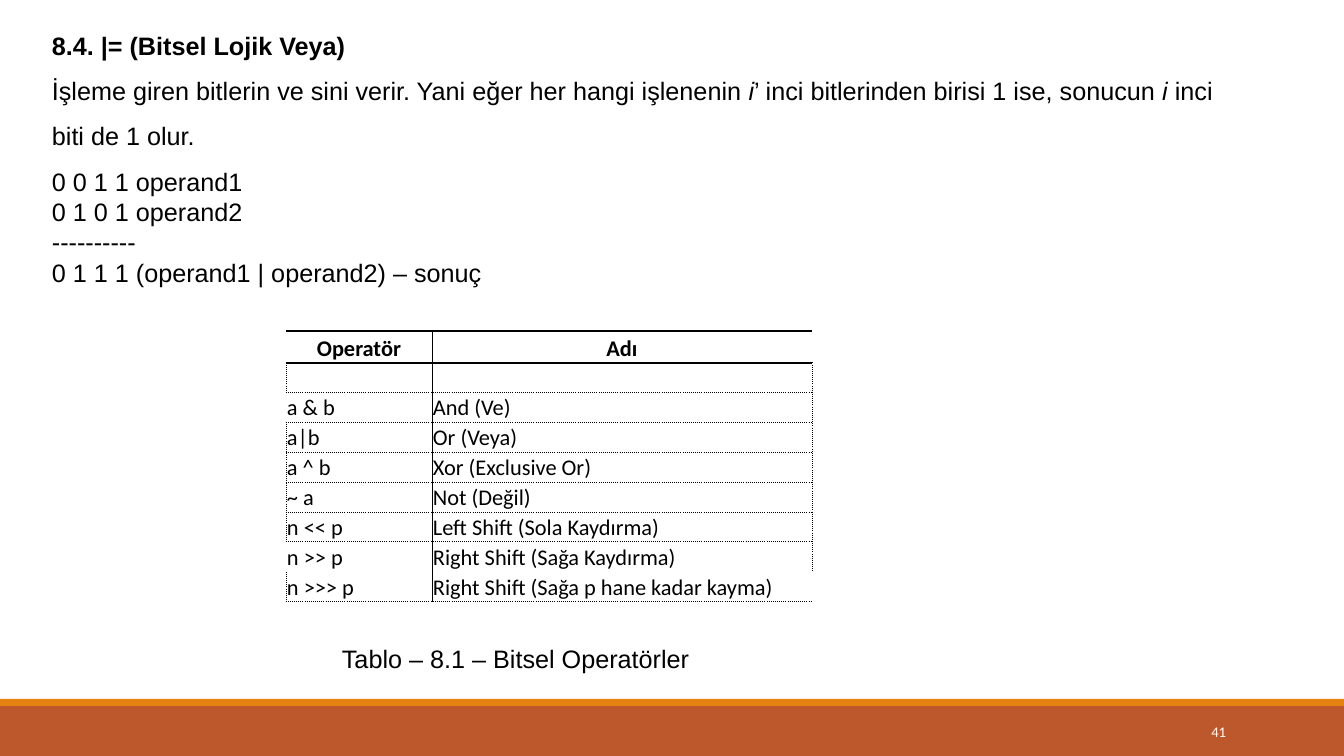
from lxml.etree import SubElement
from pptx import Presentation
from pptx.dml.color import RGBColor
from pptx.enum.shapes import MSO_SHAPE as SHAPE
from pptx.enum.text import MSO_ANCHOR as ANCHOR, MSO_AUTO_SIZE as AUTO, PP_ALIGN as ALIGN
from pptx.oxml.ns import qn
from pptx.util import Pt

PX = 12192000 / 1344
BLACK, WHITE = "000000", "FFFFFF"
BODY = dict(name="Arial", size=18)
CELL = dict(name="Calibri", size=16)
NUMBER = dict(name="Calibri", size=10.5, color=WHITE)
BOLD, ITALIC = dict(bold=True), dict(italic=True)

BANDS = [((0, 706, 1344, 50), "BD582C"), ((0, 699, 1344, 7), "E48312")]

# Each paragraph: line spacing, then runs of (text, extra format)
EXPLANATION = [
    (1.5, [("8.4. |= (Bitsel Lojik Veya)", BOLD)]),
    (1.5, [("İşleme giren bitlerin ve sini verir. Yani eğer her hangi işlenenin ", {}),
           ("i", ITALIC),
           ("’ inci bitlerinden birisi 1 ise, sonucun ", {}),
           ("i ", ITALIC),
           ("inci biti de 1 olur.", {})]),
    (1.5, [("0 0 1 1 operand1", {})]),
    (1.0, [("0 1 0 1 operand2", {})]),
    (1.0, [("----------", {})]),
    (1.0, [("0 1 1 1 (operand1 | operand2) – sonuç", {})]),
]
CAPTION = [(1.0, [("Tablo – 8.1 – Bitsel Operatörler", {})])]
SLIDE_NUMBER = [(1.0, [("41", {})])]

OPERATORS = [
    ("Operatör", "Adı"),
    ("", ""),
    ("a & b", "And (Ve)"),
    ("a|b", "Or (Veya)"),
    ("a ^ b", "Xor (Exclusive Or)"),
    ("~ a", "Not (Değil)"),
    ("n << p", "Left Shift (Sola Kaydırma)"),
    ("n >> p", "Right Shift (Sağa Kaydırma)"),
    ("n >>> p", "Right Shift (Sağa p hane kadar kayma)"),
]
TABLE_LEFT, TABLE_TOP = 286, 331
COLUMNS = [146, 380]
ROWS = [32, 29] + [30] * 7

# Borders are (points, dash); None leaves the edge open
RULE, INNER, DOT = (1, "solid"), (0.5, "solid"), (0.5, "sysDot")
ROW_LINES = [RULE, RULE] + [DOT] * 6 + [None, DOT]
LEFT_LINES = [None if i in (0, 2, 7) else DOT for i in range(len(ROWS))]
RIGHT_LINES = [None if i in (0, 8) else DOT for i in range(len(ROWS))]


def emu(*lengths):
    return [round(v * PX) for v in lengths]


def rgb(color):
    return RGBColor.from_string(color)


def add_run(p, text, color=BLACK, size=18, **values):
    r = p.add_run()
    r.text = text
    r.font.size = Pt(size)
    r.font.color.rgb = rgb(color)
    for name, value in values.items():
        setattr(r.font, name, value)


def add_text(slide, box, paragraphs, style, align=ALIGN.LEFT, **frame):
    tf = slide.shapes.add_textbox(*emu(*box)).text_frame
    for name, value in frame.items():
        setattr(tf, name, value)
    for i, (spacing, runs) in enumerate(paragraphs):
        p = tf.add_paragraph() if i else tf.paragraphs[0]
        p.alignment = align
        p.line_spacing = spacing
        for text, extra in runs:
            add_run(p, text, **style, **extra)


def add_band(slide, box, color):
    sp = slide.shapes.add_shape(SHAPE.RECTANGLE, *emu(*box))
    sp.shadow.inherit = False
    sp.fill.solid()
    sp.fill.fore_color.rgb = rgb(color)
    sp.line.fill.background()


def set_borders(cell, *lines):
    """Draw the left, right, top and bottom edges, in that order."""
    tcPr = cell._tc.get_or_add_tcPr()
    for side, line in zip("LRTB", lines):
        ln = SubElement(tcPr, qn("a:ln" + side))
        if line is None:
            SubElement(ln, qn("a:noFill"))
            continue
        points, dash = line
        ln.set("w", str(Pt(points)))
        SubElement(SubElement(ln, qn("a:solidFill")), qn("a:srgbClr"), val=BLACK)
        SubElement(ln, qn("a:prstDash"), val=dash)


def fill_cell(cell, text, header):
    margins = dict(zip(("margin_left", "margin_right", "margin_top", "margin_bottom"),
                       emu(1, 1, 1, 0)))
    for name, value in dict(margins, vertical_anchor=ANCHOR.BOTTOM).items():
        setattr(cell, name, value)
    p = cell.text_frame.paragraphs[0]
    p.alignment = ALIGN.CENTER if header else ALIGN.LEFT
    if text:
        add_run(p, text, bold=header, **CELL)
    else:
        SubElement(p._p, qn("a:endParaRPr"), sz=str(CELL["size"] * 100))


def add_operators(slide):
    box = emu(TABLE_LEFT, TABLE_TOP, sum(COLUMNS), sum(ROWS))
    table = slide.shapes.add_table(len(ROWS), len(COLUMNS), *box).table
    table.first_row = table.horz_banding = False
    for column, width in zip(table.columns, emu(*COLUMNS)):
        column.width = width
    for row, height in zip(table.rows, emu(*ROWS)):
        row.height = height
    for i, texts in enumerate(OPERATORS):
        verticals = [LEFT_LINES[i], INNER, RIGHT_LINES[i]]
        for j, text in enumerate(texts):
            cell = table.cell(i, j)
            fill_cell(cell, text, header=i == 0)
            set_borders(cell, *verticals[j:j + 2], *ROW_LINES[i:i + 2])
            cell.fill.background()


def main():
    prs = Presentation()
    prs.slide_width, prs.slide_height = emu(1344, 756)
    slide = prs.slides.add_slide(prs.slide_layouts[6])
    for box, color in BANDS:
        add_band(slide, box, color)
    add_text(slide, (42, 10, 1194, 285), EXPLANATION, BODY,
             word_wrap=True, auto_size=AUTO.SHAPE_TO_FIT_TEXT)
    add_operators(slide)
    add_text(slide, (332, 638, 378, 40), CAPTION, BODY,
             word_wrap=False, auto_size=AUTO.SHAPE_TO_FIT_TEXT)
    add_text(slide, (1092, 712, 144, 40), SLIDE_NUMBER, NUMBER, ALIGN.RIGHT,
             word_wrap=True, vertical_anchor=ANCHOR.MIDDLE)
    prs.save("out.pptx")


if __name__ == "__main__":
    main()
